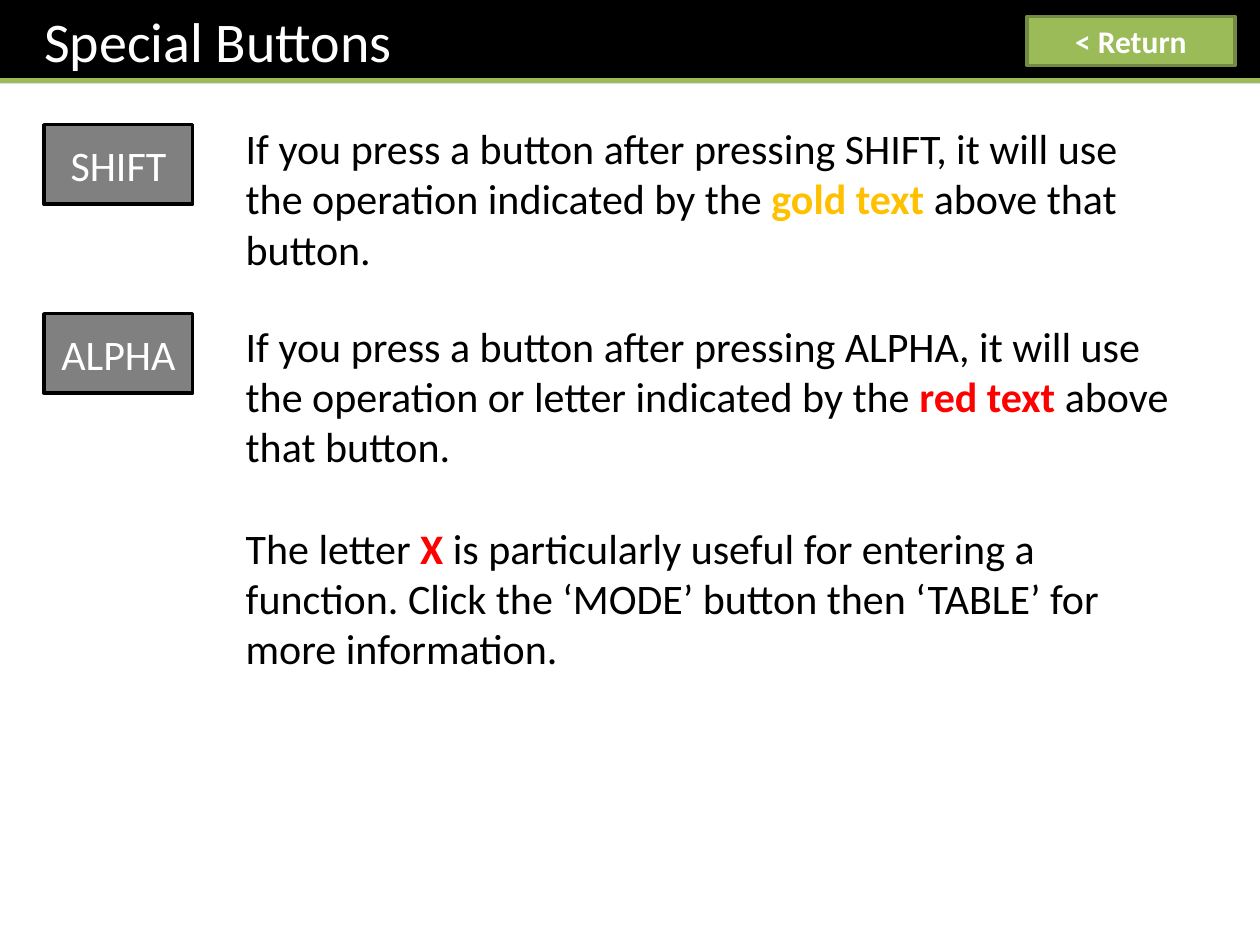
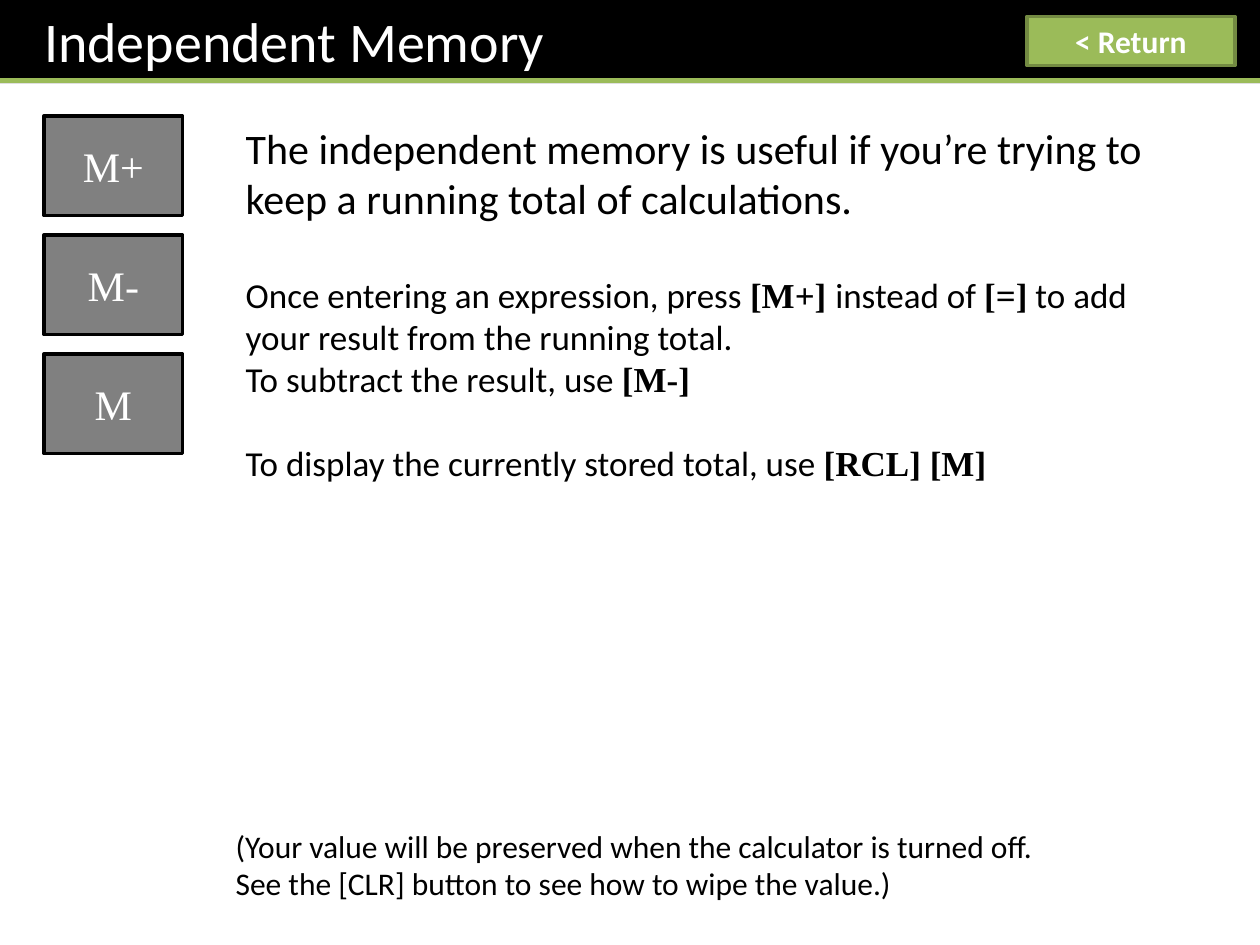
"""Build two calculator help slides: special buttons and independent memory."""
import dataclasses

import pptx
import pptx.dml.color
import pptx.enum.shapes
import pptx.enum.text
import pptx.oxml.ns
import pptx.util
from lxml import etree

RGB = pptx.dml.color.RGBColor.from_string
Pt = pptx.util.Pt
PP = pptx.enum.text.PP_ALIGN
ANCHOR = pptx.enum.text.MSO_ANCHOR
RECT = pptx.enum.shapes.MSO_SHAPE.RECTANGLE
STRAIGHT = pptx.enum.shapes.MSO_CONNECTOR.STRAIGHT


@dataclasses.dataclass(frozen=True)
class Theme:
    """Colours, fonts and type sizes shared by the slides."""
    black: str = "000000"
    white: str = "FFFFFF"
    grey: str = "808080"
    green: str = "9BBB59"
    olive: str = "738A42"
    gold: str = "FFC000"
    red: str = "FF0000"
    sans: str = "Calibri"
    serif: str = "Times New Roman"
    title: int = 32
    lead: int = 24
    text: int = 20
    small: int = 18


T = Theme()
STYLES = {
    "plain": (T.sans, False, T.black),
    "gold": (T.sans, True, T.gold),
    "red": (T.sans, True, T.red),
    "key": (T.serif, True, T.black),
    "title": (T.sans, False, T.white),
    "return": (T.sans, True, T.white),
    "sans_button": (T.sans, False, T.white),
    "serif_button": (T.serif, False, T.white),
}

prs = pptx.Presentation()
prs.slide_width = pptx.util.Inches(10)
prs.slide_height = pptx.util.Inches(7.5)
COL = prs.slide_width // 100
ROW = prs.slide_height // 75
MARGIN = 3.5
TEXT_LEFT = 18.5
TEXT_WIDTH = 75.6


def grid(left, top, width, height):
    """Turn grid columns and rows into slide lengths."""
    return int(left * COL), int(top * ROW), int(width * COL), int(height * ROW)


def write(sp, paragraphs, align=PP.LEFT, anchor=ANCHOR.TOP):
    """Fill a shape with paragraphs of (size, space after, runs)."""
    tf = sp.text_frame
    tf.word_wrap = True
    tf.auto_size = pptx.enum.text.MSO_AUTO_SIZE.NONE
    tf.vertical_anchor = anchor
    for i, (size, after, runs) in enumerate(paragraphs):
        p = tf.add_paragraph() if i else tf.paragraphs[0]
        p.alignment = align
        p.space_before = Pt(0)
        p.space_after = Pt(after)
        pPr = p._p.get_or_add_pPr()
        pPr.set("marL", "0")
        pPr.set("indent", "0")
        etree.SubElement(pPr, pptx.oxml.ns.qn("a:buNone"))
        for text, style in runs:
            font, bold, color = STYLES[style]
            r = p.add_run()
            r.text = text
            r.font.name = font
            r.font.size = Pt(size)
            r.font.bold = bold
            r.font.color.rgb = RGB(color)


slides = [
    {
        "title": "Special Buttons",
        "keys": ["SHIFT", "ALPHA"],
        "key_style": "sans_button",
        "key_top": 9.9, "key_pitch": 15, "key_size": (11.8, 6.3),
        "bodies": [
            ((TEXT_LEFT, 9.2, TEXT_WIDTH, 13.1), [
                (T.lead, 0, [
                    ("If you press a button after pressing SHIFT, it will use the operation indicated by the ", "plain"),
                    ("gold text", "gold"),
                    (" above that button.", "plain")]),
            ]),
            ((TEXT_LEFT, 24.9, TEXT_WIDTH, 29.3), [
                (T.lead, 29, [
                    ("If you press a button after pressing ALPHA, it will use the operation or letter indicated by the ", "plain"),
                    ("red text", "red"),
                    (" above that button.", "plain")]),
                (T.lead, 0, [
                    ("The letter ", "plain"),
                    ("X", "red"),
                    (" is particularly useful for entering a function. Click the ‘MODE’ button then ‘TABLE’ for more information.", "plain")]),
            ]),
        ],
    },
    {
        "title": "Independent Memory",
        "keys": ["M+", "M-", "M"],
        "key_style": "serif_button",
        "key_top": 9.2, "key_pitch": 9.45, "key_size": (11, 7.9),
        "bodies": [
            ((TEXT_LEFT, 9.2, TEXT_WIDTH, 30), [
                (T.lead, 29, [
                    ("The independent memory is useful if you’re trying to keep a running total of calculations.", "plain")]),
                (T.text, 0, [
                    ("Once entering an expression, press ", "plain"),
                    ("[M+] ", "key"),
                    ("instead of ", "plain"),
                    ("[=]", "key"),
                    (" to add your result from the running total.", "plain")]),
                (T.text, 24, [
                    ("To subtract the result, use ", "plain"),
                    ("[M-]", "key")]),
                (T.text, 0, [
                    ("To display the currently stored total, use ", "plain"),
                    ("[RCL] [M]", "key")]),
            ]),
            ((17.7, 65.1, 69.3, 7.1), [
                (T.small, 0, [("(Your value will be preserved when the calculator is turned off.", "plain")]),
                (T.small, 0, [("See the [CLR] button to see how to wipe the value.)", "plain")]),
            ]),
        ],
    },
]

layout = prs.slide_layouts.get_by_name("Two Content")
for page in slides:
    s = prs.slides.add_slide(layout)
    title, *bodies = s.placeholders

    title.left, title.top, title.width, title.height = grid(0, 0, 100, 6.6)
    title.fill.solid()
    title.fill.fore_color.rgb = RGB(T.black)
    title.text_frame.margin_left = int(MARGIN * COL)
    write(title, [(T.title, 0, [(page["title"], "title")])])

    for body, (box, paragraphs) in zip(bodies, page["bodies"]):
        body.left, body.top, body.width, body.height = grid(*box)
        write(body, paragraphs)

    x, y, w, h = grid(0, 6.4, 100, 0)
    line = s.shapes.add_connector(STRAIGHT, x, y, x + w, y)
    line.line.color.rgb = RGB(T.green)
    line.line.width = Pt(3)
    etree.SubElement(line._element.spPr, pptx.oxml.ns.qn("a:effectLst"))

    buttons = [((81.5, 1.3, 16.5, 3.9), T.green, T.olive, T.small, "< Return", "return")]
    for i, key in enumerate(page["keys"]):
        box = (MARGIN, page["key_top"] + i * page["key_pitch"], *page["key_size"])
        buttons.append((box, T.grey, T.black, T.lead, key, page["key_style"]))
    for box, fill, edge, size, label, style in buttons:
        sp = s.shapes.add_shape(RECT, *grid(*box))
        sp.shadow.inherit = False
        sp.fill.solid()
        sp.fill.fore_color.rgb = RGB(fill)
        sp.line.color.rgb = RGB(edge)
        sp.line.width = Pt(2)
        write(sp, [(size, 0, [(label, style)])], PP.CENTER, ANCHOR.MIDDLE)

prs.save("out.pptx")
